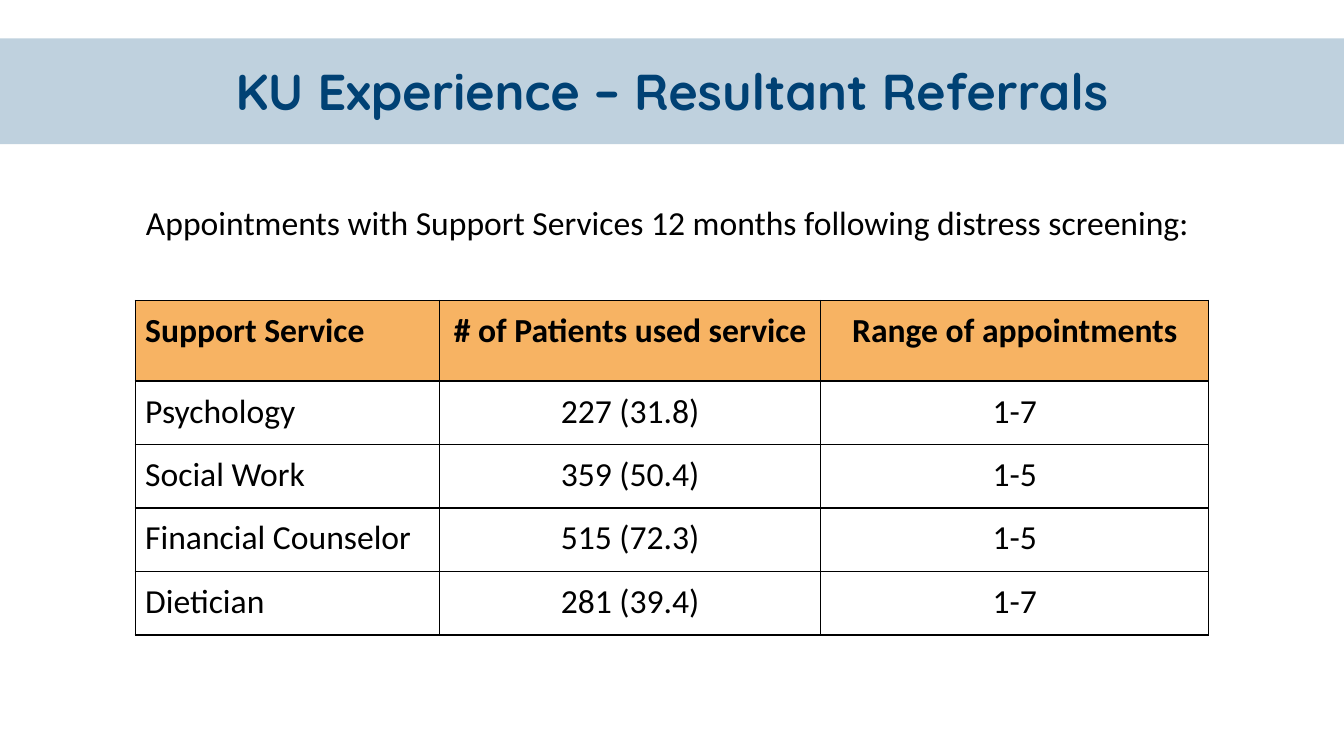
"""Build the slide on referrals that followed distress screening."""
from dataclasses import dataclass

import lxml.etree
import pptx
import pptx.dml.color
import pptx.enum.shapes
import pptx.enum.text
import pptx.oxml.ns
import pptx.presentation
import pptx.slide
import pptx.table
import pptx.text.text
import pptx.util

EMU_PER_PX = 9144
ALIGN = pptx.enum.text.PP_ALIGN


@dataclass(frozen=True)
class Theme:
    band: str = "00497F"
    band_alpha: int = 25000
    title: str = "004174"
    ink: str = "000000"
    header: str = "F7B363"
    title_font: str = "Quicksand"
    body_font: str = "Calibri"
    title_size: int = 36
    body_size: int = 24
    border_width: int = 1


@dataclass(frozen=True)
class Box:
    left: int
    top: int
    width: int
    height: int

    def emu(self) -> tuple[int, int, int, int]:
        return px(self.left), px(self.top), px(self.width), px(self.height)


@dataclass(frozen=True)
class TextStyle:
    name: str
    size: int
    color: str
    bold: bool = False
    alignment: ALIGN = ALIGN.LEFT


@dataclass(frozen=True)
class Label:
    box: Box
    text: str
    style: TextStyle


@dataclass(frozen=True)
class Service:
    name: str
    patients: str
    appointments: str


THEME = Theme()
SLIDE = Box(0, 0, 1333, 750)
BAND = Box(0, 38, 1333, 105)
TABLE = Box(134, 298, 1065, 332)
COLUMN_WIDTHS = (302, 378, 385)
HEADER_HEIGHT, ROW_HEIGHT, CELL_MARGIN = 80, 63, 10

LABELS = (
    Label(Box(156, 55, 1021, 71), "KU Experience – Resultant Referrals",
          TextStyle(THEME.title_font, THEME.title_size, THEME.title, True, ALIGN.CENTER)),
    Label(Box(135, 195, 1063, 50),
          "Appointments with Support Services 12 months following distress screening:",
          TextStyle(THEME.body_font, THEME.body_size, THEME.ink)),
)

SERVICES = (
    Service("Support Service", "# of Patients used service", "Range of appointments"),
    Service("Psychology", "227 (31.8)", "1-7"),
    Service("Social Work", "359 (50.4)", "1-5"),
    Service("Financial Counselor", "515 (72.3)", "1-5"),
    Service("Dietician", "281 (39.4)", "1-7"),
)


def px(length: int) -> int:
    return length * EMU_PER_PX


def rgb(color: str) -> pptx.dml.color.RGBColor:
    return pptx.dml.color.RGBColor.from_string(color)


def write_text(frame: pptx.text.text.TextFrame, text: str, style: TextStyle) -> None:
    paragraph = frame.paragraphs[0]
    paragraph.alignment = style.alignment
    run = paragraph.add_run()
    run.text = text
    values = {"name": style.name, "size": pptx.util.Pt(style.size), "bold": style.bold}
    for attribute, value in values.items():
        setattr(run.font, attribute, value)
    run.font.color.rgb = rgb(style.color)


def draw_band(slide: pptx.slide.Slide) -> None:
    shape = slide.shapes.add_shape(pptx.enum.shapes.MSO_SHAPE.RECTANGLE, *BAND.emu())
    shape.shadow.inherit = False
    shape.line.fill.background()
    shape.fill.solid()
    shape.fill.fore_color.rgb = rgb(THEME.band)
    color = shape.element.spPr.find(".//" + pptx.oxml.ns.qn("a:srgbClr"))
    lxml.etree.SubElement(color, pptx.oxml.ns.qn("a:alpha"), val=str(THEME.band_alpha))


def draw_label(slide: pptx.slide.Slide, label: Label) -> None:
    frame = slide.shapes.add_textbox(*label.box.emu()).text_frame
    frame.word_wrap = True
    write_text(frame, label.text, label.style)


def add_borders(cell: pptx.table._Cell) -> None:
    qn = pptx.oxml.ns.qn
    properties = cell._tc.get_or_add_tcPr()
    for side in ("lnL", "lnR", "lnT", "lnB"):
        line = lxml.etree.SubElement(properties, qn(f"a:{side}"),
                                     w=str(pptx.util.Pt(THEME.border_width)))
        fill = lxml.etree.SubElement(line, qn("a:solidFill"))
        lxml.etree.SubElement(fill, qn("a:srgbClr"), val=THEME.ink)


def draw_cell(cell: pptx.table._Cell, text: str, is_header: bool, alignment: ALIGN) -> None:
    for side in ("left", "right", "top", "bottom"):
        setattr(cell, f"margin_{side}", px(CELL_MARGIN))
    add_borders(cell)
    if is_header:
        cell.fill.solid()
        cell.fill.fore_color.rgb = rgb(THEME.header)
    else:
        cell.fill.background()
    style = TextStyle(THEME.body_font, THEME.body_size, THEME.ink, is_header, alignment)
    write_text(cell.text_frame, text, style)


def draw_table(slide: pptx.slide.Slide) -> None:
    table = slide.shapes.add_table(len(SERVICES), len(COLUMN_WIDTHS), *TABLE.emu()).table
    table.horz_banding = False
    for column, width in zip(table.columns, COLUMN_WIDTHS):
        column.width = px(width)
    for index, service in enumerate(SERVICES):
        is_header = index == 0
        table.rows[index].height = px(HEADER_HEIGHT if is_header else ROW_HEIGHT)
        texts = (service.name, service.patients, service.appointments)
        for position, text in enumerate(texts):
            alignment = ALIGN.CENTER if position else ALIGN.LEFT
            draw_cell(table.cell(index, position), text, is_header, alignment)


def main() -> None:
    presentation = pptx.Presentation()
    presentation.slide_width = px(SLIDE.width)
    presentation.slide_height = px(SLIDE.height)
    slide = presentation.slides.add_slide(presentation.slide_layouts[6])
    draw_band(slide)
    for label in LABELS:
        draw_label(slide, label)
    draw_table(slide)
    presentation.save("out.pptx")


if __name__ == "__main__":
    main()
